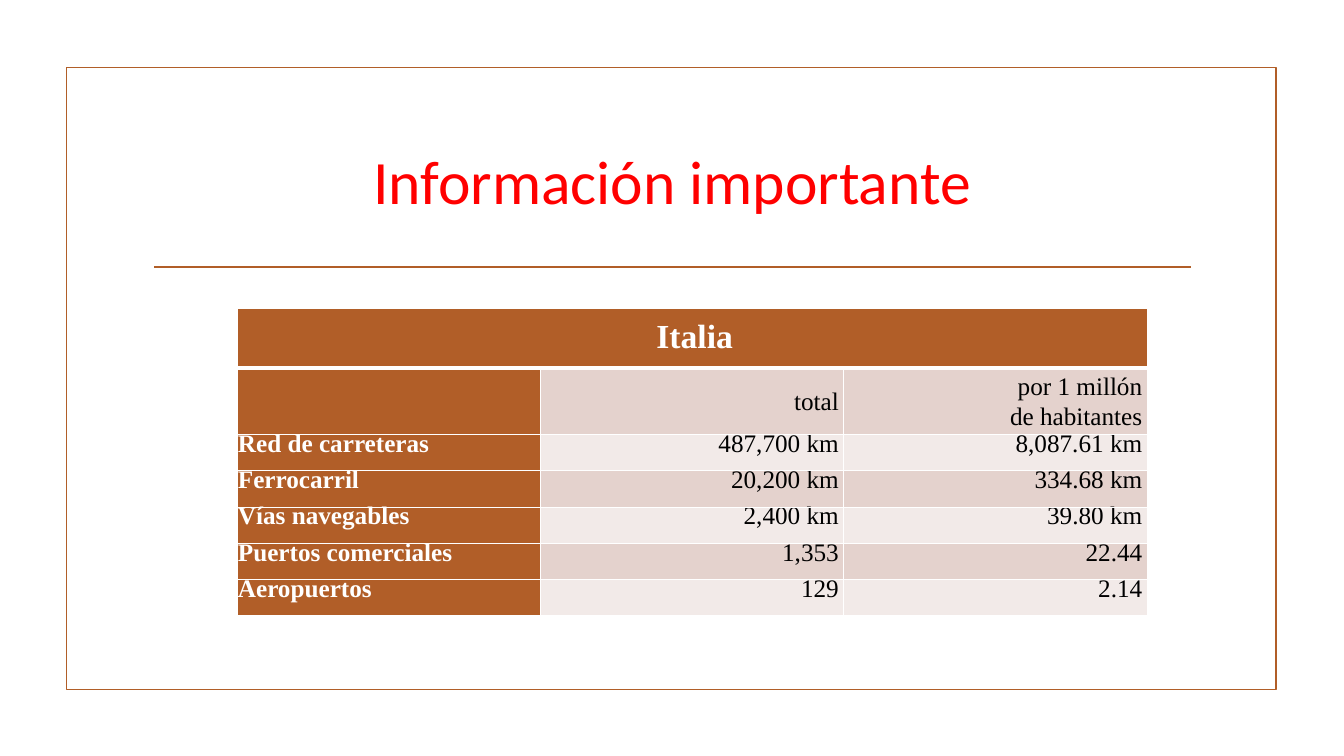
"""Build the slide with key figures on Italian transport."""
from dataclasses import dataclass
from lxml import etree
from pptx import Presentation
from pptx.dml.color import RGBColor
from pptx.enum.shapes import MSO_CONNECTOR, MSO_SHAPE
from pptx.enum.text import MSO_ANCHOR, PP_ALIGN
from pptx.oxml import parse_xml
from pptx.oxml.ns import nsdecls, qn
from pptx.util import Inches, Pt

COLORS = {
    "rust": "B15E28",
    "rose": "E4D2CD",
    "blush": "F2EAE8",
    "title": "FF0000",
    "white": "FFFFFF",
    "black": "000000",
}
COLUMN_WIDTH = 3.01
ROW_HEIGHTS = [0.59, 0.62] + [0.36] * 5
ROWS = [
    ("Italia", "", ""),
    ("", "total", "por 1 millón\nde habitantes"),
    ("Red de carreteras", "487,700 km", "8,087.61 km"),
    ("Ferrocarril", "20,200 km", "334.68 km"),
    ("Vías navegables", "2,400 km", "39.80 km"),
    ("Puertos comerciales", "1,353", "22.44"),
    ("Aeropuertos", "129", "2.14"),
]


@dataclass
class CellStyle:
    fill: str
    color: str = "black"
    bold: bool = False
    size: float = 18
    align: PP_ALIGN = PP_ALIGN.RIGHT
    anchor: MSO_ANCHOR = MSO_ANCHOR.TOP
    left: float = 0.1
    padding: float = 0.03
    spacing: object = Pt(14.4)
    after: float = 0


def rgb(name: str) -> RGBColor:
    return RGBColor.from_string(COLORS[name])


def style_for(row: int, column: int) -> CellStyle:
    if row == 0:
        return CellStyle("rust", "white", True, 24, PP_ALIGN.CENTER,
                         MSO_ANCHOR.MIDDLE, spacing=Pt(25.6), after=8)
    if column == 0:
        return CellStyle("rust", "white", True, align=PP_ALIGN.LEFT, left=0.01)
    band = "rose" if row % 2 else "blush"
    if row == 1:
        return CellStyle(band, anchor=MSO_ANCHOR.MIDDLE, padding=0.01, spacing=1.07)
    return CellStyle(band)


def add_span(para, text: str, font: str, size: float, color: str, bold: bool = False) -> None:
    span = para.add_run()
    span.text = text
    span.font.name = font
    span.font.size = Pt(size)
    span.font.bold = bold
    span.font.color.rgb = rgb(color)


def set_borders(cell, top: float, bottom: float) -> None:
    widths = {"lnL": 1, "lnR": 1, "lnT": top, "lnB": bottom}
    properties = cell._tc.get_or_add_tcPr()
    for index, (side, width) in enumerate(widths.items()):
        properties.insert(index, parse_xml(
            f'<a:{side} {nsdecls("a")} w="{Pt(width)}"><a:solidFill>'
            f'<a:srgbClr val="{COLORS["white"]}"/></a:solidFill></a:{side}>'))


def fill_cell(cell, text: str, style: CellStyle) -> None:
    cell.fill.solid()
    cell.fill.fore_color.rgb = rgb(style.fill)
    cell.vertical_anchor = style.anchor
    cell.margin_left, cell.margin_right = Inches(style.left), Inches(0.05)
    cell.margin_top = cell.margin_bottom = Inches(style.padding)
    if not text:
        return
    para = cell.text_frame.paragraphs[0]
    para.alignment = style.align
    para.line_spacing = style.spacing
    para.space_after = Pt(style.after)
    for index, line in enumerate(text.split("\n")):
        if index:
            para.add_line_break()
        add_span(para, line, "Times New Roman", style.size, style.color, style.bold)


def add_frame(page) -> None:
    frame = page.shapes.add_shape(MSO_SHAPE.RECTANGLE, Inches(0.66), Inches(0.67),
                                  Inches(12), Inches(6.17))
    frame.shadow.inherit = False
    frame.fill.background()
    rule = page.shapes.add_connector(MSO_CONNECTOR.STRAIGHT, Inches(1.53), Inches(2.65),
                                     Inches(11.81), Inches(2.65))
    etree.SubElement(rule._element.spPr, qn("a:effectLst"))
    for shape in (frame, rule):
        shape.line.color.rgb = rgb("rust")
        shape.line.width = Pt(1.25)


def add_title(page) -> None:
    box = page.shapes.add_textbox(Inches(1.42), Inches(1.07), Inches(10.5), Inches(1.43))
    box.text_frame.word_wrap = True
    box.text_frame.vertical_anchor = MSO_ANCHOR.MIDDLE
    para = box.text_frame.paragraphs[0]
    para.alignment = PP_ALIGN.CENTER
    add_span(para, "Información importante", "Calibri", 44, "title")


def add_figures(page) -> None:
    table = page.shapes.add_table(
        len(ROWS), 3, Inches(2.35), Inches(3.06),
        Inches(3 * COLUMN_WIDTH), Inches(sum(ROW_HEIGHTS))).table
    for column in table.columns:
        column.width = Inches(COLUMN_WIDTH)
    for row, height in enumerate(ROW_HEIGHTS):
        table.rows[row].height = Inches(height)
        for column, text in enumerate(ROWS[row]):
            cell = table.cell(row, column)
            fill_cell(cell, text, style_for(row, column))
            set_borders(cell, 3 if row == 1 else 1, 3 if row == 0 else 1)
    table.cell(0, 0).merge(table.cell(0, 2))


def main() -> None:
    deck = Presentation()
    deck.slide_width, deck.slide_height = Inches(13.33), Inches(7.5)
    page = deck.slides.add_slide(deck.slide_layouts[6])
    add_frame(page)
    add_title(page)
    add_figures(page)
    deck.save("out.pptx")


if __name__ == "__main__":
    main()
